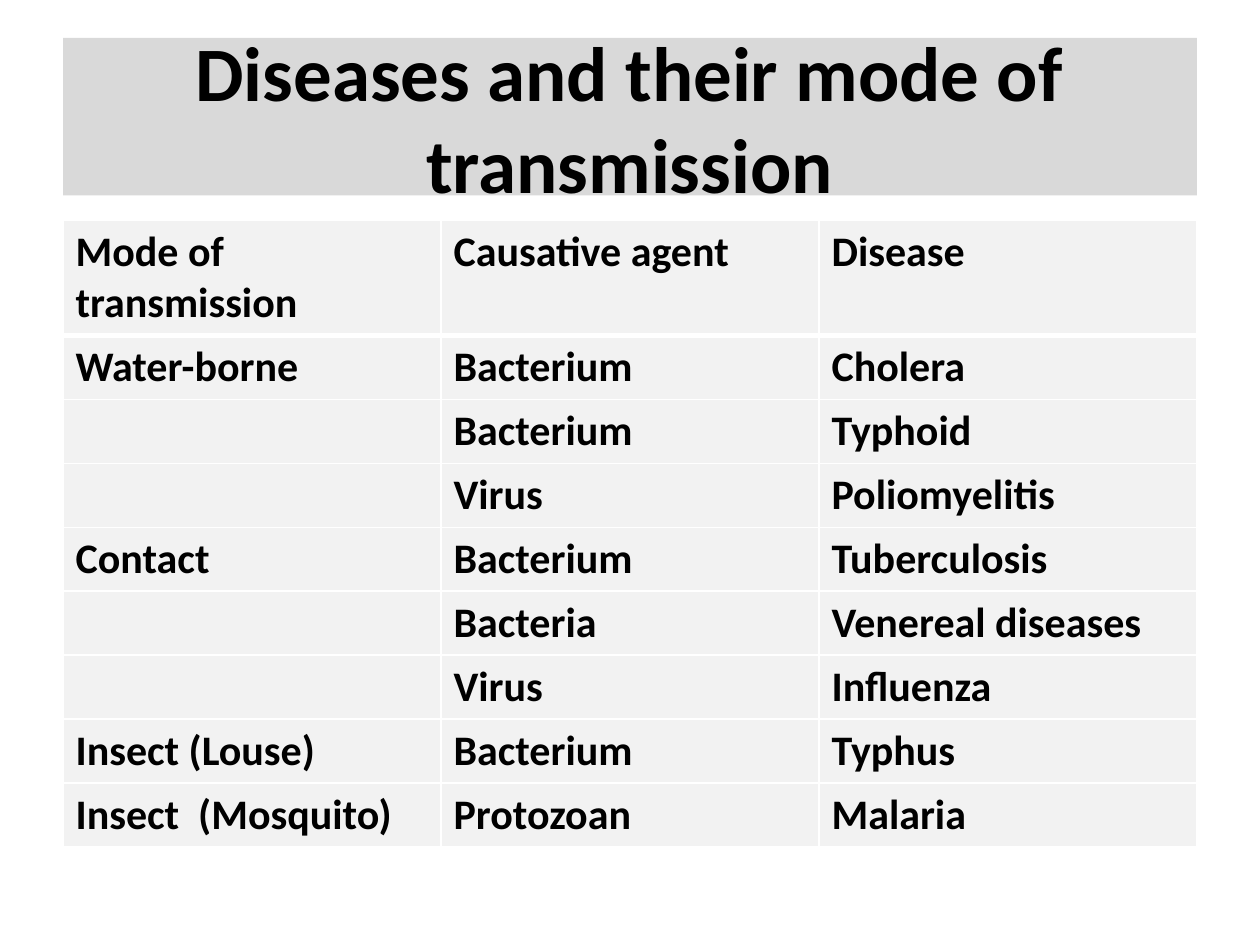
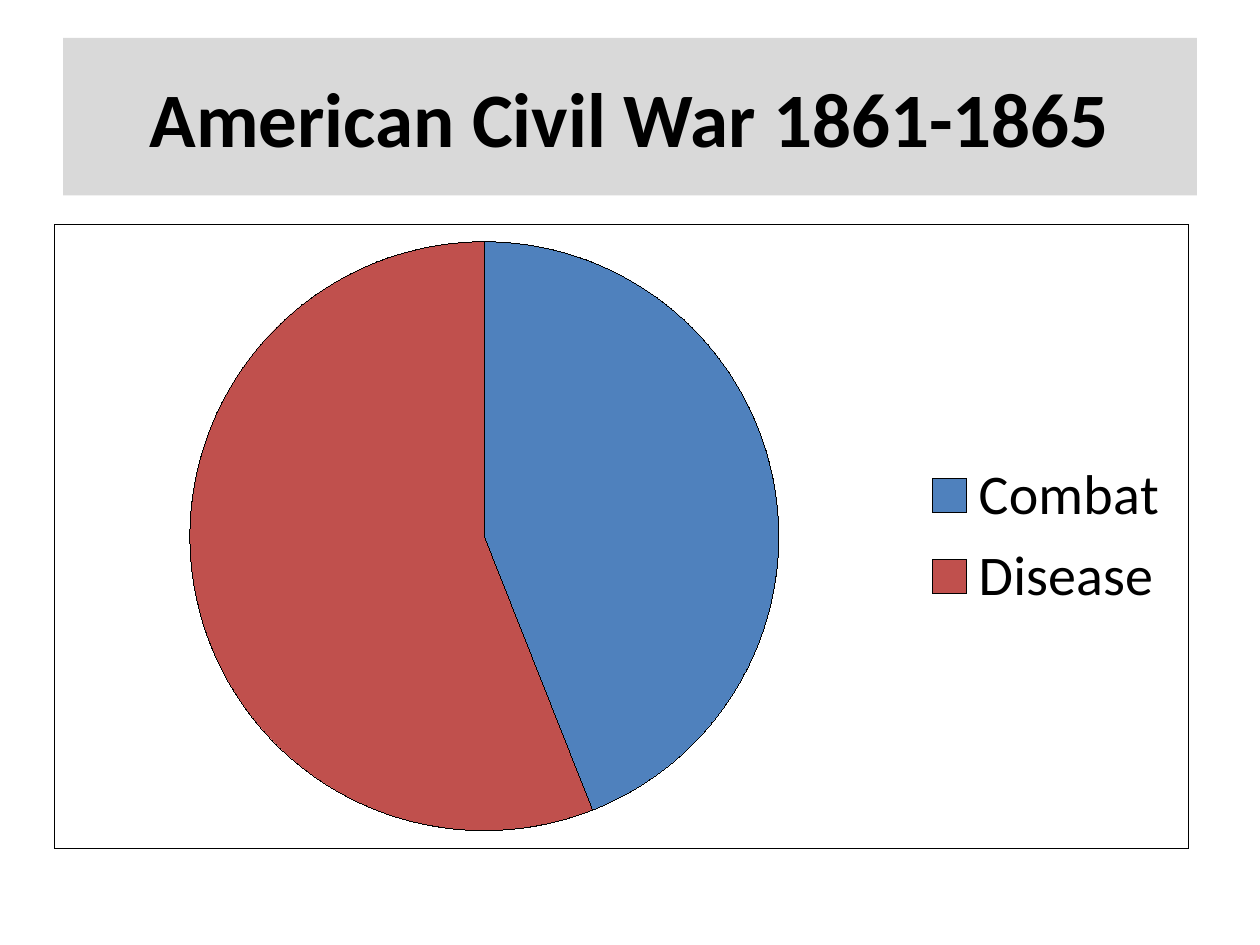
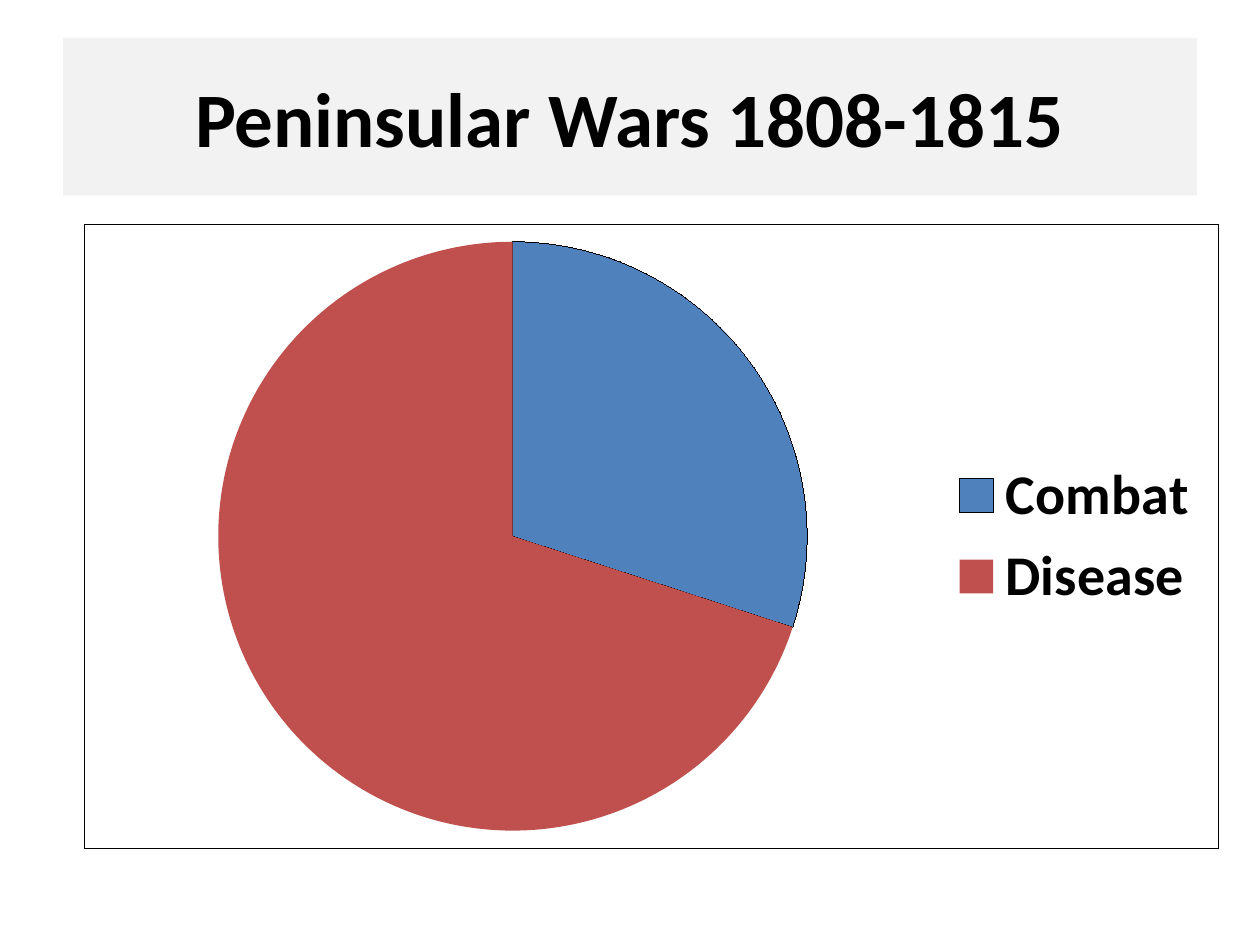
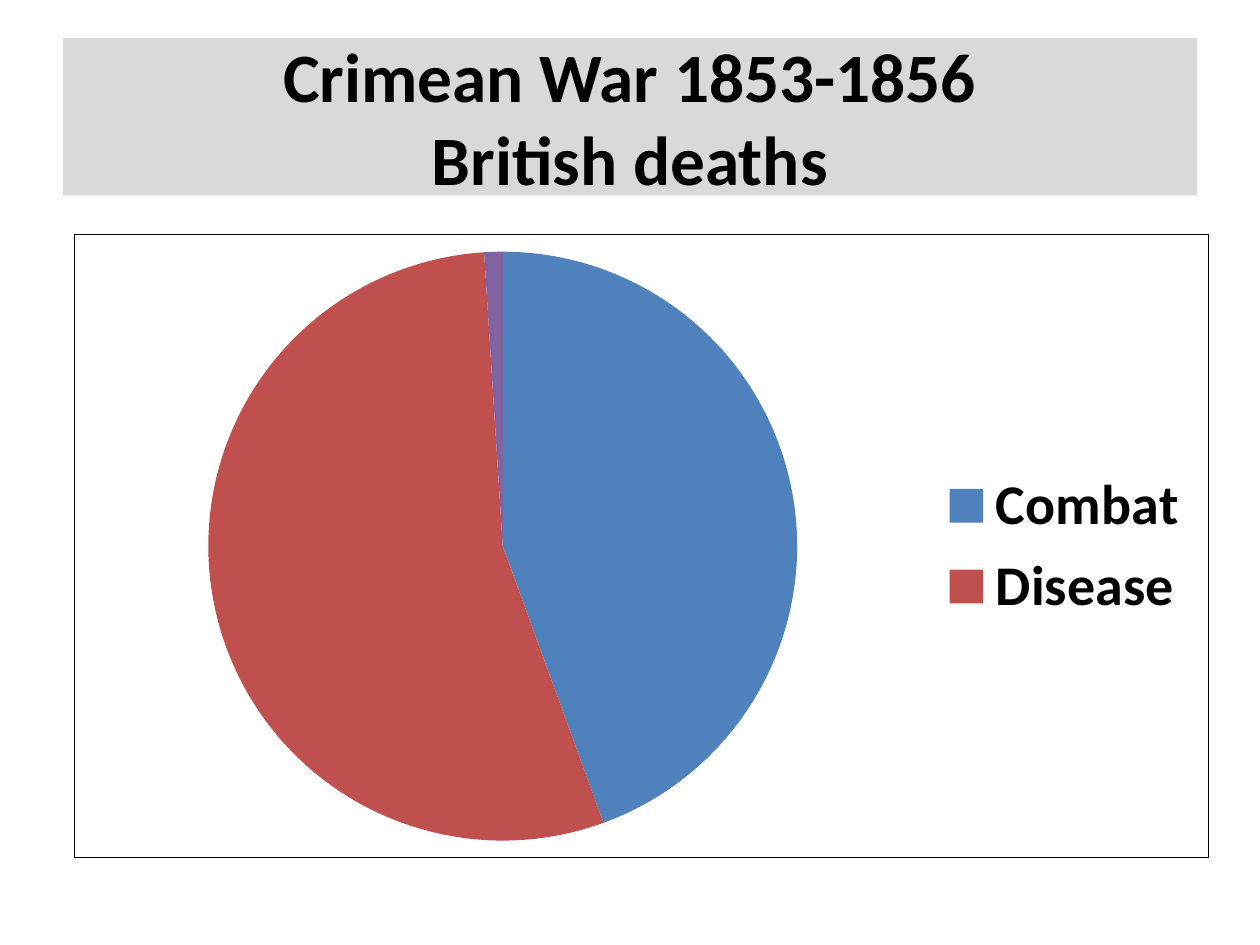
from dataclasses import dataclass
from typing import NamedTuple, Optional

from lxml.etree import SubElement
from pptx import Presentation
from pptx.chart.data import CategoryChartData as ChartData
from pptx.dml.color import RGBColor as Rgb
from pptx.enum.chart import XL_CHART_TYPE as ChartType, XL_LEGEND_POSITION as LegendSide
from pptx.enum.text import MSO_ANCHOR as Anchor, MSO_AUTO_SIZE as AutoSize, PP_ALIGN as Align
from pptx.oxml import parse_xml
from pptx.oxml.ns import nsdecls, qn
from pptx.util import Pt


# Shared look
@dataclass(frozen=True)
class Theme:
    font: str = "Calibri"
    black: str = "000000"
    white: str = "FFFFFF"
    band: str = "D9D9D9"
    pale: str = "F2F2F2"
    slices: tuple[str, ...] = ("4F81BD", "C0504D", "9BBB59", "8064A2")
    title_size: float = 44
    small_title_size: float = 39.6
    table_size: float = 24
    chart_size: float = 18
    legend_size: float = 32
    cell_line: float = 1
    header_line: float = 3


THEME = Theme()
TITLE_ONLY = 5


class Area(NamedTuple):
    left: float
    top: float
    width: float
    height: float

    def lengths(self) -> list:
        return [Pt(value) for value in self]


TITLE_AREA = Area(36, 21.6, 648, 90)
TABLE_AREA = Area(36, 126, 648, 352.8)
ROW_HEIGHT = 29.2


# Slide content
@dataclass(frozen=True)
class Heading:
    lines: tuple[str, ...]
    fill: str = THEME.band
    size: float = THEME.title_size


@dataclass(frozen=True)
class WarPie:
    heading: Heading
    left: float
    top: float
    deaths: tuple[tuple[str, Optional[float]], ...]
    outlined: tuple[int, ...] = ()
    bold_legend: bool = True

    @property
    def area(self) -> Area:
        return Area(self.left, self.top, 648, 356.4)


DISEASES = (
    ("Mode of transmission", "Causative agent", "Disease"),
    ("Water-borne", "Bacterium", "Cholera"),
    ("", "Bacterium", "Typhoid"),
    ("", "Virus", "Poliomyelitis"),
    ("Contact", "Bacterium", "Tuberculosis"),
    ("", "Bacteria", "Venereal diseases"),
    ("", "Virus", "Influenza"),
    ("Insect (Louse)", "Bacterium", "Typhus"),
    ("Insect  (Mosquito)", "Protozoan", "Malaria"),
)

WARS = (
    WarPie(Heading(("American Civil War 1861-1865",)), 31, 128.2,
           (("Combat", 44), ("Disease", 56)), outlined=(0, 1), bold_legend=False),
    WarPie(Heading(("Peninsular Wars 1808-1815",), fill=THEME.pale), 48.2, 128.2,
           (("Combat", 30), ("Disease", 70)), outlined=(0,)),
    WarPie(Heading(("Crimean War 1853-1856", "British deaths"), size=THEME.small_title_size),
           42.5, 133.9, (("Combat", 44), ("Disease", 54), ("", None), ("", 1))),
)


def style_font(font, size: float, bold: bool) -> None:
    font.name = THEME.font
    font.size = Pt(size)
    font.bold = bold
    font.color.rgb = Rgb.from_string(THEME.black)


def paint(fill, color: str) -> None:
    fill.solid()
    fill.fore_color.rgb = Rgb.from_string(color)


# Title band
def add_page(deck, heading: Heading):
    page = deck.slides.add_slide(deck.slide_layouts[TITLE_ONLY])
    box = page.shapes.title
    box.left, box.top, box.width, box.height = TITLE_AREA.lengths()
    paint(box.fill, heading.fill)
    frame = box.text_frame
    frame.auto_size = AutoSize.NONE
    frame.word_wrap = True
    frame.vertical_anchor = Anchor.MIDDLE
    para = frame.paragraphs[0]
    para.alignment = Align.CENTER
    for index, line in enumerate(heading.lines):
        if index:
            para.add_line_break()
        span = para.add_run()
        span.text = line
        style_font(span.font, heading.size, True)
    return page


# Table
def add_borders(cell, top: float, bottom: float) -> None:
    properties = cell._tc.get_or_add_tcPr()
    side = THEME.cell_line
    widths = {"lnL": side, "lnR": side, "lnT": top, "lnB": bottom}
    for index, (tag, width) in enumerate(widths.items()):
        properties.insert(index, parse_xml(
            f'<a:{tag} {nsdecls("a")} w="{Pt(width)}"><a:solidFill>'
            f'<a:srgbClr val="{THEME.white}"/></a:solidFill></a:{tag}>'))


def add_disease_table(page) -> None:
    holder = page.shapes.add_table(len(DISEASES), len(DISEASES[0]), *TABLE_AREA.lengths())
    table = holder.table
    table.first_row = table.horz_banding = False
    for row_index, texts in enumerate(DISEASES):
        table.rows[row_index].height = Pt(ROW_HEIGHT)
        top = THEME.header_line if row_index == 1 else THEME.cell_line
        bottom = THEME.header_line if row_index == 0 else THEME.cell_line
        for column, text in enumerate(texts):
            cell = table.cell(row_index, column)
            paint(cell.fill, THEME.pale)
            add_borders(cell, top, bottom)
            para = cell.text_frame.paragraphs[0]
            if text:
                span = para.add_run()
                span.text = text
                style_font(span.font, THEME.table_size, True)
            else:
                para.font.size = Pt(THEME.table_size)
    holder.height = Pt(TABLE_AREA.height)


# Pie charts
def frame_chart(chart) -> None:
    """Give the chart area a square hairline outline."""
    body = chart._chartSpace.find(qn("c:chart"))
    body.addprevious(parse_xml(f'<c:roundedCorners {nsdecls("c")} val="0"/>'))
    body.addnext(parse_xml(
        f'<c:spPr {nsdecls("c", "a")}><a:noFill/><a:ln><a:solidFill>'
        f'<a:srgbClr val="{THEME.black}"/></a:solidFill></a:ln></c:spPr>'))


def hide_legend_entries(legend, indexes: list[int]) -> None:
    position = legend._element.find(qn("c:legendPos"))
    for index in reversed(indexes):
        entry = parse_xml(f'<c:legendEntry {nsdecls("c")}><c:idx val="{index}"/></c:legendEntry>')
        SubElement(entry, qn("c:delete")).set("val", "1")
        position.addnext(entry)


def add_war_pie(page, war: WarPie) -> None:
    data = ChartData()
    data.categories = [label for label, _ in war.deaths]
    data.add_series("Series 1", [value for _, value in war.deaths])
    chart = page.shapes.add_chart(ChartType.PIE, *war.area.lengths(), data).chart
    chart.has_title = False
    style_font(chart.font, THEME.chart_size, False)
    frame_chart(chart)

    # Legend
    chart.has_legend = True
    legend = chart.legend
    legend.position = LegendSide.RIGHT
    legend.include_in_layout = False
    style_font(legend.font, THEME.legend_size, war.bold_legend)
    hide_legend_entries(legend, [i for i, (label, _) in enumerate(war.deaths) if not label])

    # Slices
    plot = chart.plots[0]
    plot.vary_by_categories = True
    for index in range(len(war.deaths)):
        piece = plot.series[0].points[index].format
        paint(piece.fill, THEME.slices[index])
        if index in war.outlined:
            paint(piece.line.fill, THEME.black)
        else:
            piece.line.fill.background()


def main() -> None:
    deck = Presentation()
    deck.slide_width, deck.slide_height = Pt(720), Pt(540)
    add_disease_table(add_page(deck, Heading(("Diseases and their mode of transmission",))))
    for war in WARS:
        add_war_pie(add_page(deck, war.heading), war)
    deck.save("out.pptx")


if __name__ == "__main__":
    main()
